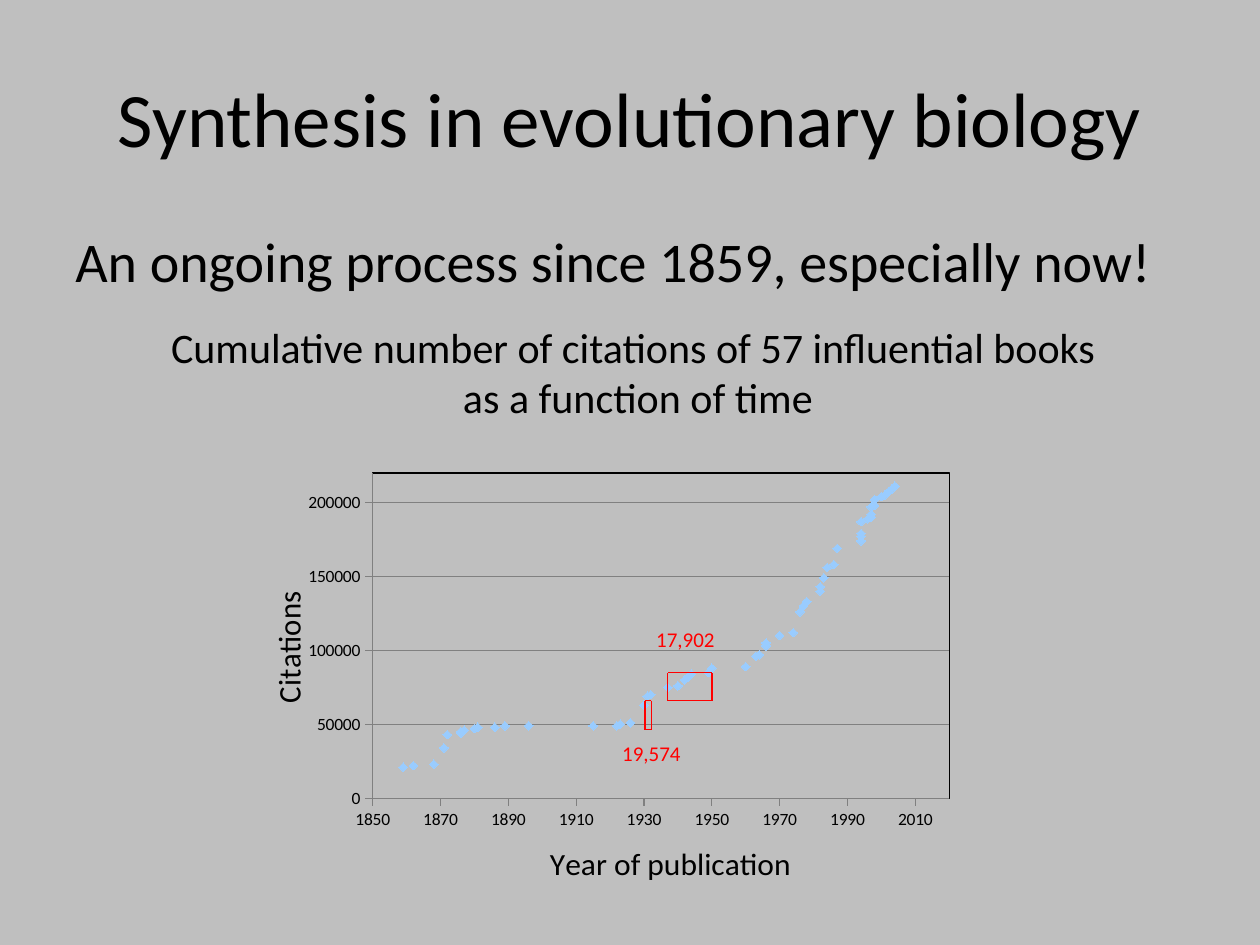
from lxml import etree
from pptx import Presentation
from pptx.chart.data import XyChartData
from pptx.dml.color import RGBColor
from pptx.enum.chart import XL_CHART_TYPE, XL_MARKER_STYLE, XL_TICK_MARK
from pptx.enum.shapes import MSO_CONNECTOR
from pptx.enum.text import MSO_ANCHOR, PP_ALIGN
from pptx.oxml import parse_xml
from pptx.oxml.ns import nsdecls, qn
from pptx.util import Inches, Pt


def color(hex_value):
    return RGBColor.from_string(hex_value)


def add_text(left, top, width, height, lines, size, hex_value="000000",
             align=PP_ALIGN.LEFT, anchor=MSO_ANCHOR.TOP, wrap=True):
    """Add a text box with one paragraph per line."""
    box = page.shapes.add_textbox(Inches(left), Inches(top), Inches(width), Inches(height))
    frame = box.text_frame
    frame.word_wrap = wrap
    frame.vertical_anchor = anchor
    for number, line in enumerate(lines):
        para = frame.add_paragraph() if number else frame.paragraphs[0]
        para.alignment = align
        span = para.add_run()
        span.text = line
        span.font.name = "Calibri"
        span.font.size = Pt(size)
        span.font.color.rgb = color(hex_value)


deck = Presentation()
deck.slide_width, deck.slide_height = Inches(10), Inches(7.5)
page = deck.slides.add_slide(deck.slide_layouts[6])
page.background.fill.solid()
page.background.fill.fore_color.rgb = color("BFBFBF")

add_text(0.5, 0.3, 9, 1.25, ["Synthesis in evolutionary biology"], 44,
         align=PP_ALIGN.CENTER, anchor=MSO_ANCHOR.MIDDLE)
add_text(0.5, 1.75, 9, 0.7, ["An ongoing process since 1859, especially now!"], 32)

# Year of publication, cumulative citations in thousands
books = [
    (1859, 21), (1862, 22), (1868, 23), (1871, 34), (1872, 43), (1876, 44),
    (1876, 45), (1877, 46), (1880, 47), (1881, 48), (1886, 48), (1889, 49),
    (1896, 49), (1915, 49), (1922, 49), (1923, 50), (1926, 51), (1930, 63),
    (1931, 69), (1932, 70), (1937, 75), (1940, 76), (1942, 80), (1943, 82),
    (1944, 84), (1949, 85), (1950, 88), (1960, 89), (1963, 96), (1964, 97),
    (1966, 103), (1966, 105), (1970, 110), (1974, 112), (1976, 126), (1977, 130),
    (1978, 133), (1982, 140), (1982, 143), (1983, 149), (1984, 156), (1986, 158),
    (1987, 169), (1994, 174), (1994, 177), (1994, 179), (1994, 187), (1996, 189),
    (1997, 190), (1997, 192), (1997, 197), (1998, 198), (1998, 202), (2000, 204),
    (2001, 205), (2002, 207), (2003, 209), (2004, 211),
]
data = XyChartData()
citations = data.add_series("Series 1")
for year, thousands in books:
    citations.add_data_point(year, thousands * 1000)

chart = page.shapes.add_chart(XL_CHART_TYPE.XY_SCATTER, Inches(2.07), Inches(3.41),
                              Inches(5.92), Inches(3.67), data).chart
chart.has_legend = False
chart.has_title = False
chart.font.name = "Calibri"
chart.font.size = Pt(10)
chart.font.color.rgb = color("000000")
plot = chart.plots[0]
plot.vary_by_categories = False
series = plot.series[0]
series.smooth = False
series.format.line.fill.background()
series.marker.style = XL_MARKER_STYLE.DIAMOND
series.marker.size = 5
series.marker.format.fill.solid()
series.marker.format.fill.fore_color.rgb = color("99CCFF")
series.marker.format.line.color.rgb = color("99CCFF")

axes = [
    (chart.category_axis, "Year of publication", 1850, 2020, 20, (0.38, 0.9)),
    (chart.value_axis, "Citations", 0, 220000, 50000, (0, 0.35)),
]
layouts = []
for axis, title, low, high, step, corner in axes:
    axis.minimum_scale, axis.maximum_scale, axis.major_unit = low, high, step
    axis.major_tick_mark = XL_TICK_MARK.OUTSIDE
    axis.minor_tick_mark = XL_TICK_MARK.NONE
    axis.has_major_gridlines = axis is chart.value_axis
    axis.format.line.color.rgb = color("808080")
    axis.tick_labels.font.size = Pt(10)
    axis.tick_labels.number_format = "0"
    axis.tick_labels.number_format_is_linked = False
    span = axis.axis_title.text_frame.paragraphs[0].add_run()
    span.text = title
    span.font.name = "Calibri"
    span.font.size = Pt(18)
    span.font.bold = False
    span.font.color.rgb = color("000000")
    layouts.append((axis.axis_title._element, corner, None))
# python-pptx hands out a new axis object each time, so gridlines are set here
chart.category_axis.has_major_gridlines = False
chart.value_axis.has_major_gridlines = True
chart.value_axis.major_gridlines.format.line.color.rgb = color("808080")

plot_area = chart._chartSpace.chart.plotArea
layouts.append((plot_area, (0.15, 0.096), (0.773, 0.72)))
for element, corner, extent in layouts:
    for old in element.findall(qn("c:layout")):
        element.remove(old)
    layout = parse_xml(f"<c:layout {nsdecls('c')}><c:manualLayout/></c:layout>")
    settings = [("xMode", "edge"), ("yMode", "edge"), ("x", corner[0]), ("y", corner[1])]
    if extent:
        settings = [("layoutTarget", "inner")] + settings + [("w", extent[0]), ("h", extent[1])]
    for tag, value in settings:
        etree.SubElement(layout[0], qn(f"c:{tag}")).set("val", str(value))
    text = element.find(qn("c:tx"))
    element.insert(0 if text is None else 1, layout)
plot_area.append(parse_xml(
    f'<c:spPr {nsdecls("c", "a")}><a:noFill/><a:ln w="9525"><a:solidFill>'
    '<a:srgbClr val="000000"/></a:solidFill></a:ln></c:spPr>'))

add_text(1.22, 2.5, 7.61, 0.91,
         ["Cumulative number of citations of 57 influential books",
          " as a function of time"], 24, align=PP_ALIGN.CENTER, wrap=False)

# Two marked periods, each outlined by four lines
for left, top, right, bottom in [(5.12, 5.56, 5.17, 5.79), (5.3, 5.34, 5.65, 5.56)]:
    corners = [(left, top), (right, top), (right, bottom), (left, bottom)]
    for start, end in zip(corners, corners[1:] + corners[:1]):
        edge = page.shapes.add_connector(MSO_CONNECTOR.STRAIGHT,
                                         *[Inches(value) for value in start + end])
        edge.line.color.rgb = color("FF0000")
        edge.line.width = Pt(0.75)
        etree.SubElement(edge._element.spPr, qn("a:effectLst"))

for left, top, count in [(4.84, 5.83, "19,574"), (5.11, 4.92, "17,902")]:
    add_text(left, top, 0.67, 0.3, [count], 12, "FF0000", wrap=False)

deck.save("out.pptx")
